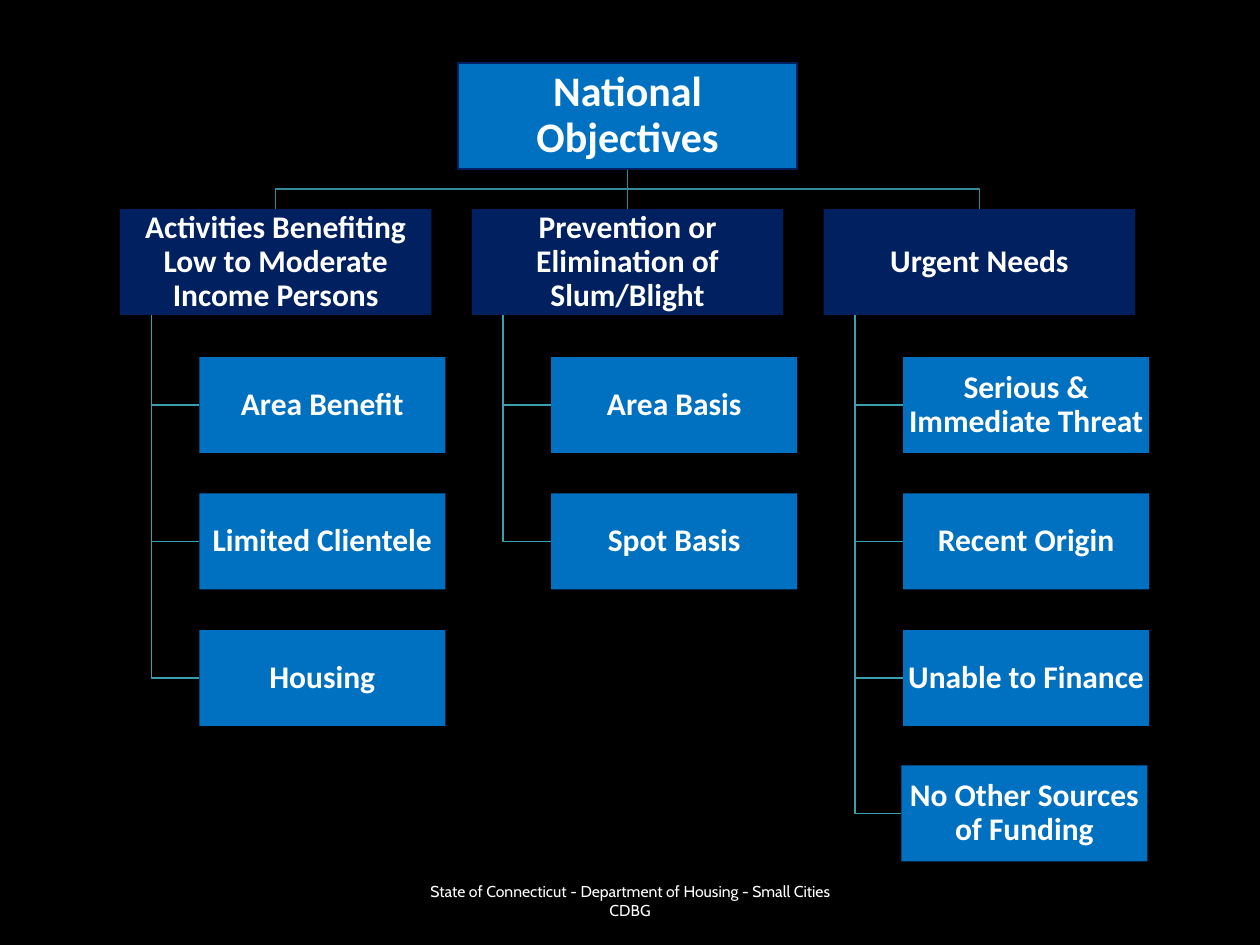
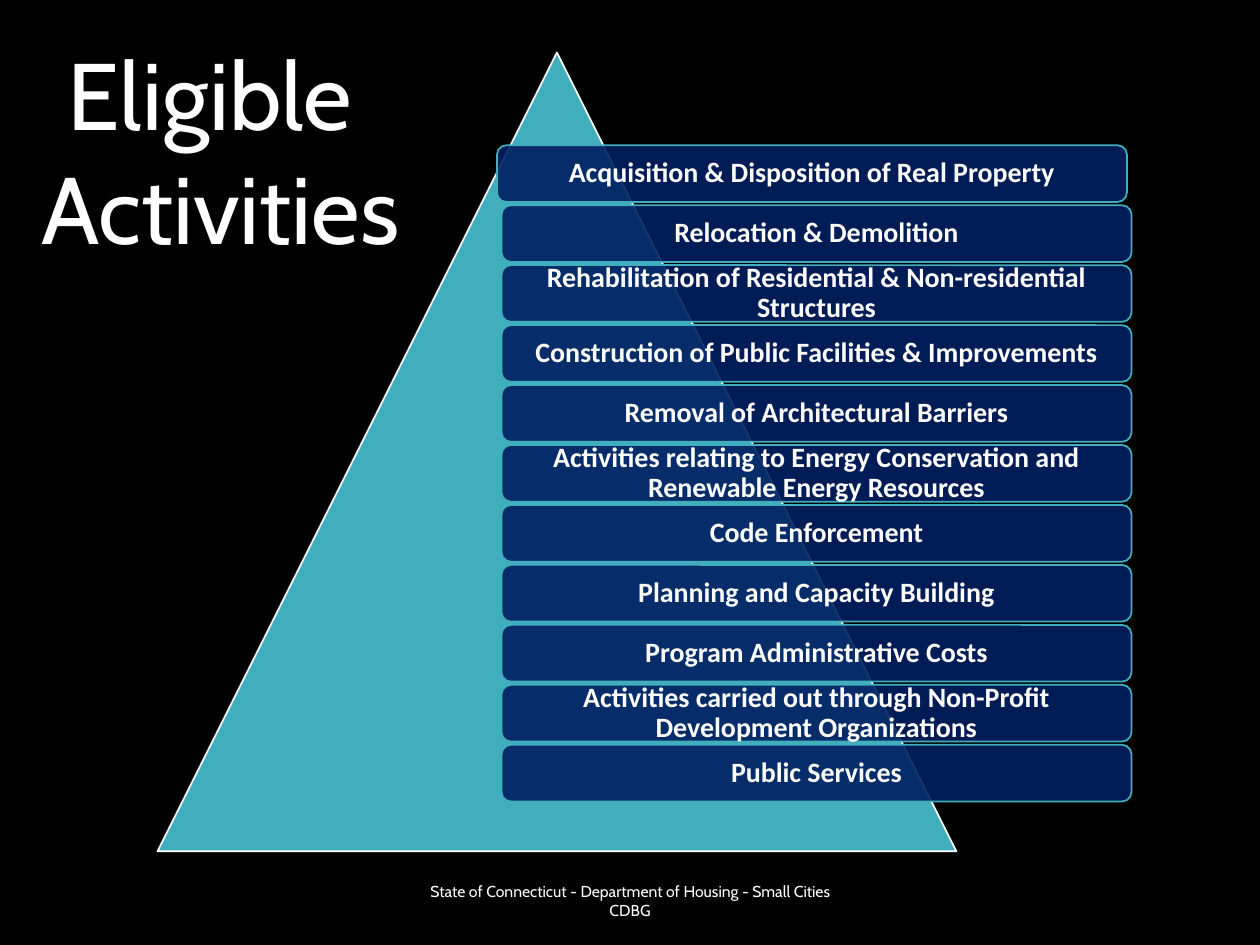
from lxml import etree
from pptx import Presentation
from pptx.dml.color import RGBColor
from pptx.enum.shapes import MSO_CONNECTOR, MSO_SHAPE
from pptx.enum.text import MSO_ANCHOR, PP_ALIGN
from pptx.oxml.ns import qn
from pptx.util import Pt

RECTANGLE = MSO_SHAPE.RECTANGLE
ROUNDED = MSO_SHAPE.ROUNDED_RECTANGLE
TRIANGLE = MSO_SHAPE.ISOSCELES_TRIANGLE
STRAIGHT = MSO_CONNECTOR.STRAIGHT
TOP, MIDDLE = MSO_ANCHOR.TOP, MSO_ANCHOR.MIDDLE
CENTER = PP_ALIGN.CENTER

BLACK = RGBColor(0x00, 0x00, 0x00)
WHITE = RGBColor(0xFF, 0xFF, 0xFF)
NAVY = RGBColor(0x00, 0x20, 0x60)
BLUE = RGBColor(0x00, 0x70, 0xC0)
TEAL = RGBColor(0x41, 0xAE, 0xBD)
BRANCH_TEAL = RGBColor(0x3B, 0x9E, 0xAC)
TRUNK_TEAL = RGBColor(0x34, 0x8B, 0x97)

FOOTER = "State of Connecticut - Department of Housing - Small Cities CDBG"


def write_text(shape, *lines, size, font="Calibri", bold=True, spacing=0.9,
               inset=(1, 1), anchor=MIDDLE, wrap=True):
    frame = shape.text_frame
    frame.word_wrap = wrap
    frame.vertical_anchor = anchor
    frame.margin_left = frame.margin_right = Pt(inset[0])
    frame.margin_top = frame.margin_bottom = Pt(inset[1])
    for number, line in enumerate(lines):
        paragraph = frame.add_paragraph() if number else frame.paragraphs[0]
        paragraph.alignment = CENTER
        paragraph.line_spacing = spacing
        run = paragraph.add_run()
        run.text = line
        run.font.name = font
        run.font.size = Pt(size)
        run.font.bold = bold
        run.font.color.rgb = WHITE


def add_shape(slide, kind, left, top, width, height, fill, line=None):
    shape = slide.shapes.add_shape(kind, Pt(left), Pt(top), Pt(width), Pt(height))
    shape.shadow.inherit = False
    shape.fill.solid()
    shape.fill.fore_color.rgb = fill
    if line is None:
        shape.line.fill.background()
    else:
        shape.line.color.rgb = line
        shape.line.width = Pt(1)
    return shape


presentation = Presentation()
presentation.slide_width = Pt(720)
presentation.slide_height = Pt(540)
blank_layout = presentation.slide_layouts[6]
slides = [presentation.slides.add_slide(blank_layout) for _ in range(2)]
objectives_slide, activities_slide = slides

for slide in slides:
    slide.background.fill.solid()
    slide.background.fill.fore_color.rgb = BLACK
    footer = slide.shapes.add_textbox(Pt(238.5), Pt(500.5), Pt(243), Pt(28.75))
    write_text(footer, FOOTER, size=9, font="Cabin", bold=False, spacing=1.0,
               inset=(7.2, 3.6))

objectives = [
    ("Activities Benefiting Low to Moderate Income Persons",
     ["Area Benefit", "Limited Clientele", "Housing"]),
    ("Prevention or Elimination of Slum/Blight",
     ["Area Basis", "Spot Basis"]),
    ("Urgent Needs",
     ["Serious & Immediate Threat", "Recent Origin", "Unable to Finance",
      "No Other Sources of Funding"]),
]
FIRST_COLUMN, COLUMN_STEP = 68.5, 201.1
HEAD_TOP, HEAD_WIDTH, HEAD_HEIGHT = 119.5, 178, 60.5
HEAD_BOTTOM = HEAD_TOP + HEAD_HEIGHT
CHILD_TOP, CHILD_STEP, CHILD_WIDTH, CHILD_HEIGHT = 204, 78, 140.6, 54.8
CHILD_INDENT, BRANCH_INDENT = 45.4, 18
ROOT_TOP, ROOT_WIDTH = 36, 193.7
ROOT_BOTTOM, BUS_Y = ROOT_TOP + HEAD_HEIGHT, 108
root_center = FIRST_COLUMN + COLUMN_STEP + HEAD_WIDTH / 2

head_centers = [FIRST_COLUMN + column * COLUMN_STEP + HEAD_WIDTH / 2
                for column in range(len(objectives))]
elbows = [([(root_center, ROOT_BOTTOM), (root_center, BUS_Y),
            (center, BUS_Y), (center, HEAD_TOP)], TRUNK_TEAL)
          for center in (head_centers[0], head_centers[-1])]
boxes = []
for column, (heading, children) in enumerate(objectives):
    left = FIRST_COLUMN + column * COLUMN_STEP
    boxes.append((heading, left, HEAD_TOP, HEAD_WIDTH, HEAD_HEIGHT, NAVY))
    for row, child in enumerate(children):
        child_left = left + CHILD_INDENT - (1 if row == 3 else 0)
        child_top = CHILD_TOP + row * CHILD_STEP - (0.6 if row == 3 else 0)
        child_middle = child_top + CHILD_HEIGHT / 2
        branch_x = left + BRANCH_INDENT
        elbows.append(([(branch_x, HEAD_BOTTOM), (branch_x, child_middle),
                        (child_left, child_middle)], BRANCH_TEAL))
        boxes.append((child, child_left, child_top, CHILD_WIDTH, CHILD_HEIGHT, BLUE))

for points, color in elbows:
    corners = [(Pt(x), Pt(y)) for x, y in points]
    builder = objectives_slide.shapes.build_freeform(*corners[0])
    builder.add_line_segments(corners[1:], close=False)
    elbow = builder.convert_to_shape()
    elbow.shadow.inherit = False
    elbow.fill.background()
    elbow.line.color.rgb = color
    elbow.line.width = Pt(1)

trunk = objectives_slide.shapes.add_connector(
    STRAIGHT, Pt(root_center), Pt(ROOT_BOTTOM), Pt(root_center), Pt(HEAD_TOP))
trunk.line.color.rgb = TRUNK_TEAL
trunk.line.width = Pt(1)
etree.SubElement(trunk._element.spPr, qn("a:effectLst"))

root = add_shape(objectives_slide, RECTANGLE, root_center - ROOT_WIDTH / 2, ROOT_TOP,
                 ROOT_WIDTH, HEAD_HEIGHT, BLUE, NAVY)
write_text(root, "National Objectives", size=24)
for label, left, top, width, height, fill in boxes:
    box = add_shape(objectives_slide, RECTANGLE, left, top, width, height, fill)
    write_text(box, label, size=18)

activities = [
    "Acquisition & Disposition of Real Property",
    "Relocation & Demolition",
    "Rehabilitation of Residential & Non-residential Structures",
    "Construction of Public Facilities & Improvements",
    "Removal of Architectural Barriers",
    "Activities relating to Energy Conservation and Renewable Energy Resources",
    "Code Enforcement",
    "Planning and Capacity Building",
    "Program Administrative Costs",
    "Activities carried out through Non-Profit Development Organizations",
    "Public Services",
]
add_shape(activities_slide, TRIANGLE, 90, 30, 456.5, 456.5, TEAL, WHITE)
for row, activity in enumerate(activities):
    bar = add_shape(activities_slide, ROUNDED, 286.6 if row else 284,
                    83 + row * 34.26, 360, 32.4, NAVY, TEAL)
    fill_color = bar._element.spPr.find(qn("a:solidFill"))[0]
    etree.SubElement(fill_color, qn("a:alpha"), val="90000")
    write_text(bar, activity, size=16, inset=(4.8, 4.8))

title = activities_slide.shapes.add_textbox(Pt(14.4), Pt(17.3), Pt(223), Pt(138))
write_text(title, "Eligible ", "Activities", size=54, font="Cabin", bold=False,
           spacing=1.0, inset=(7.2, 3.6), anchor=TOP, wrap=False)

presentation.save("out.pptx")
